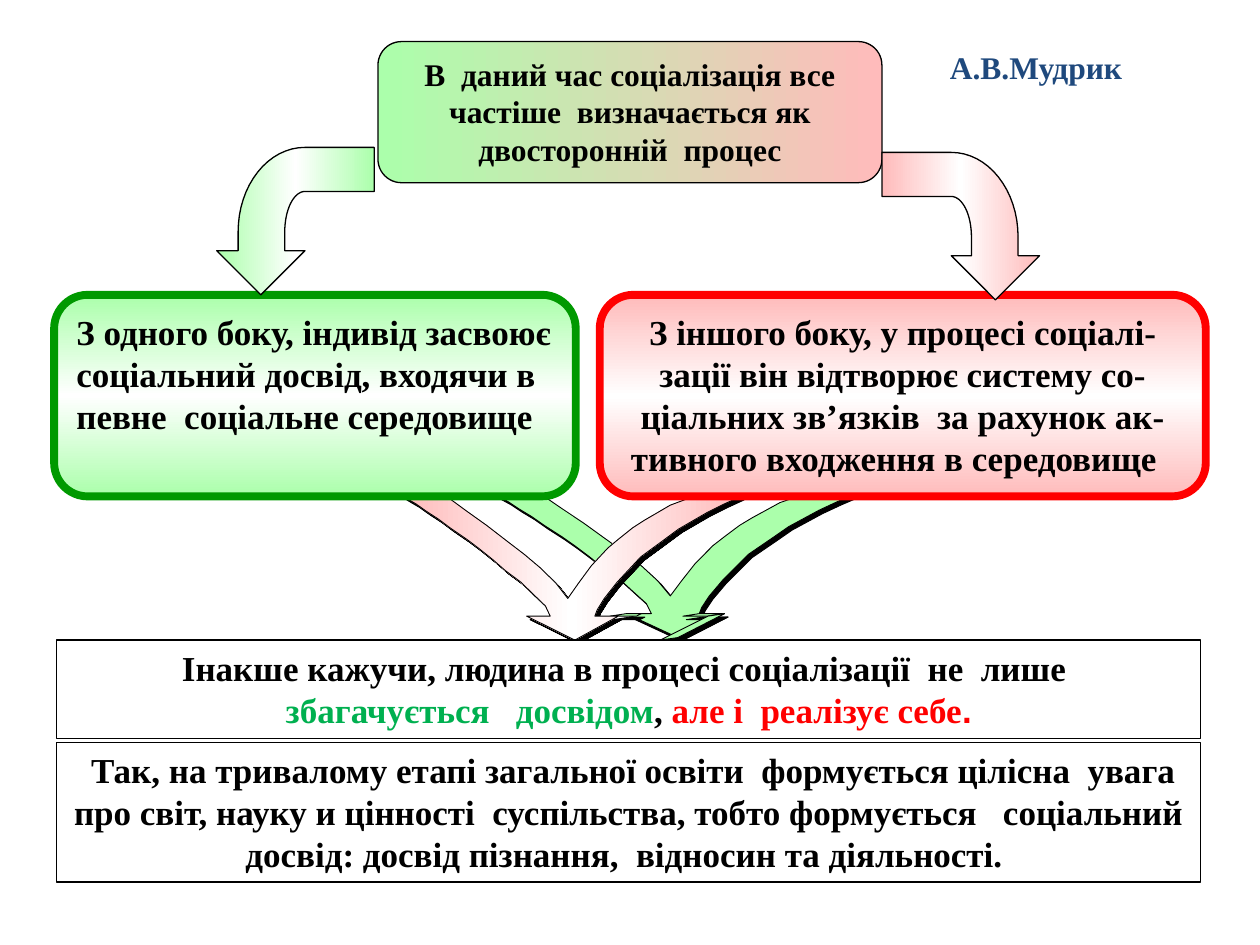
"""Build a slide on socialisation as a two-sided process."""
import math

from lxml import etree
from pptx import Presentation
from pptx import util as u
from pptx.dml.color import RGBColor
from pptx.enum import shapes, text
from pptx.oxml.ns import qn

THEME = {
    "font": "Times New Roman", "space_font": "Arial", "body": 20, "small": 18,
    "black": "000000", "white": "FFFFFF", "mint": "ABFFAB", "rose": "FFBBBB",
    "green": "009900", "red": "FF0000", "gain": "00B050", "author": "1F497D",
}
MINT_BAND = ("mint", "white", "mint")
ROSE_BAND = ("rose", "white", "rose")
CENTER, LEFT = text.PP_ALIGN.CENTER, text.PP_ALIGN.LEFT
ROUND, RECT = shapes.MSO_SHAPE.ROUNDED_RECTANGLE, shapes.MSO_SHAPE.RECTANGLE

SUMMARY = [[(" ", "black", "space_font"),
            ("Так, на тривалому етапі загальної освіти  формується цілісна  увага про світ, "
             "науку и цінності  суспільства, тобто формується   соціальний досвід: "
             "досвід пізнання,  відносин та діяльності. ", "black", "font")]]
THESIS = [[("В  даний час соціалізація все частіше  визначається як двосторонній  процес",
            "black", "font")]]
ONE_SIDE = [[("З одного боку, індивід засвоює соціальний досвід, входячи в певне  "
              "соціальне середовище", "black", "font")]]
OTHER_SIDE = [[("З іншого боку, у процесі соціалі-зації він відтворює систему со-ціальних "
                "зв’язків  за рахунок ак-тивного входження в середовище  ", "black", "font")]]
CONCLUSION = [[("Інакше кажучи, людина в процесі соціалізації  не  лише ", "black", "font")],
              [("збагачується   досвідом", "gain", "font"), (", ", "black", "font"),
               ("але і  реалізує себе", "red", "font"), (".", "red", "space_font")]]
AUTHOR = [[("А.В.Мудрик", "author", "font")]]

BOXES = [
    (RECT, (0.45, 5.89, 9.08, 1.11), ("white",), 0, "black", 0.75, SUMMARY, "body", CENTER),
    (ROUND, (3, 0.33, 4, 1.12), ("mint", "rose"), 0, "black", 0.75, THESIS, "small", CENTER),
    (ROUND, (0.43, 2.34, 4.14, 1.6), MINT_BAND, 90, "green", 4.5, ONE_SIDE, "body", LEFT),
    (ROUND, (4.76, 2.34, 4.81, 1.6), ROSE_BAND, 90, "red", 4.5, OTHER_SIDE, "body", CENTER),
    (RECT, (0.45, 5.08, 9.08, 0.78), ("white",), 0, "black", 0.75, CONCLUSION, "body", CENTER),
]

RIBBON = [
    (3.92, 3.92), (4.29, 3.92), (4.45, 4.03), (4.63, 4.15), (4.81, 4.28), (4.95, 4.38),
    (5.09, 4.49), (5.22, 4.61), (5.32, 4.73), (5.41, 4.61), (5.52, 4.47), (5.66, 4.33),
    (5.75, 4.26), (5.87, 4.17), (5.97, 4.11), (6.08, 4.05), (6.19, 3.99), (6.39, 3.92),
    (6.79, 3.92), (6.65, 3.98), (6.5, 4.05), (6.26, 4.18), (6.13, 4.27), (5.94, 4.4),
    (5.86, 4.48), (5.74, 4.6), (5.63, 4.73), (5.57, 4.82), (5.55, 4.87), (5.75, 4.87),
    (5.38, 5.06), (4.97, 4.87), (5.17, 4.87), (5.13, 4.79), (5.03, 4.7), (4.92, 4.6),
    (4.79, 4.51), (4.68, 4.42), (4.56, 4.33), (4.46, 4.26), (4.32, 4.17), (4.22, 4.1),
    (4.12, 4.04), (4.03, 3.98),
]
RIBBON_EDGES = [
    [(5.42, 4.89), (5.55, 4.87), (5.75, 4.87), (5.61, 4.89)],
    [(5.24, 5.08), (5.38, 5.06), (5.75, 4.87), (5.62, 4.89)],
    [(4.84, 4.89), (5.05, 4.89), (5.09, 4.87), (4.97, 4.87)],
]


def color(name):
    return RGBColor.from_string(THEME[name])


def paint(shape, fills, angle, line, width):
    shape.shadow.inherit = False
    if len(fills) == 1:
        shape.fill.solid()
        shape.fill.fore_color.rgb = color(fills[0])
    else:
        shape.fill.gradient()
        shape.fill.gradient_angle = angle
        stops = shape._element.spPr.find(qn("a:gradFill")).find(qn("a:gsLst"))
        for stop in list(stops):
            stops.remove(stop)
        for index, name in enumerate(fills):
            position = str(100000 * index // (len(fills) - 1))
            stop = etree.SubElement(stops, qn("a:gs"), pos=position)
            etree.SubElement(stop, qn("a:srgbClr"), val=THEME[name])
    shape.line.color.rgb = color(line)
    shape.line.width = u.Pt(width)


def cast_shadow(shape):
    effects = shape._element.spPr.find(qn("a:effectLst"))
    shadow = etree.SubElement(effects, qn("a:outerShdw"), dist=str(u.Pt(2.8)),
                              dir="2700000", algn="ctr", rotWithShape="0")
    etree.SubElement(shadow, qn("a:srgbClr"), val=THEME["black"])


def write(box, paragraphs, size="body", align=CENTER, wrap=True):
    frame = box.text_frame
    frame.word_wrap = wrap
    frame.vertical_anchor = text.MSO_ANCHOR.TOP
    for index, spans in enumerate(paragraphs):
        para = frame.add_paragraph() if index else frame.paragraphs[0]
        para.alignment = align
        for words, ink, font in spans:
            span = para.add_run()
            span.text = words
            span.font.name = THEME[font]
            span.font.size = u.Pt(THEME[size])
            span.font.bold = True
            span.font.color.rgb = color(ink)


def outline(parent, points, fills, width):
    start, *rest = [(u.Inches(x), u.Inches(y)) for x, y in points]
    builder = parent.build_freeform(*start)
    builder.add_line_segments(rest, close=True)
    shape = builder.convert_to_shape()
    paint(shape, fills, 0, "black", width)
    return shape


def arc(center, radii, start, end, steps=16):
    angles = [math.radians(start + (end - start) * i / steps) for i in range(steps + 1)]
    return [(center[0] + radii[0] * math.cos(a), center[1] - radii[1] * math.sin(a))
            for a in angles]


def bent_arrow():
    bend = (7.55, 1.88)
    return ([(7.9, 2.38), (8.25, 2.03), (8.08, 2.03)] + arc(bend, (0.53, 0.67), 0, 90)
            + [(7, 1.21), (7, 1.56)] + arc(bend, (0.16, 0.32), 90, 0)
            + [(7.71, 2.03), (7.55, 2.03)])


def main():
    deck = Presentation()
    deck.slide_width, deck.slide_height = u.Inches(10), u.Inches(7.5)
    page = deck.slides.add_slide(deck.slide_layouts[6])

    crossing = page.shapes.add_group_shape().shapes
    shifted = [(3.2 + (x - 3.92) * 2.67 / 2.86, y + 0.02) for x, y in RIBBON]
    ribbons = [(points, ("mint",)) for points in [RIBBON, *RIBBON_EDGES]]
    for points, fills in ribbons + [(shifted, ROSE_BAND)]:
        cast_shadow(outline(crossing, points, fills, 0.5))

    for kind, place, fills, angle, line, width, words, size, align in BOXES:
        box = page.shapes.add_shape(kind, *map(u.Inches, place))
        paint(box, fills, angle, line, width)
        write(box, words, size=size, align=align)

    right = bent_arrow()
    left = [(9.97 - x, y - 0.04) for x, y in right]
    outline(page.shapes, right, ROSE_BAND, 0.75)
    outline(page.shapes, left, MINT_BAND, 0.75)

    author = page.shapes.add_textbox(*map(u.Inches, (7.44, 0.33, 1.58, 0.4)))
    write(author, AUTHOR, size="small", align=LEFT, wrap=False)
    deck.save("out.pptx")


if __name__ == "__main__":
    main()
